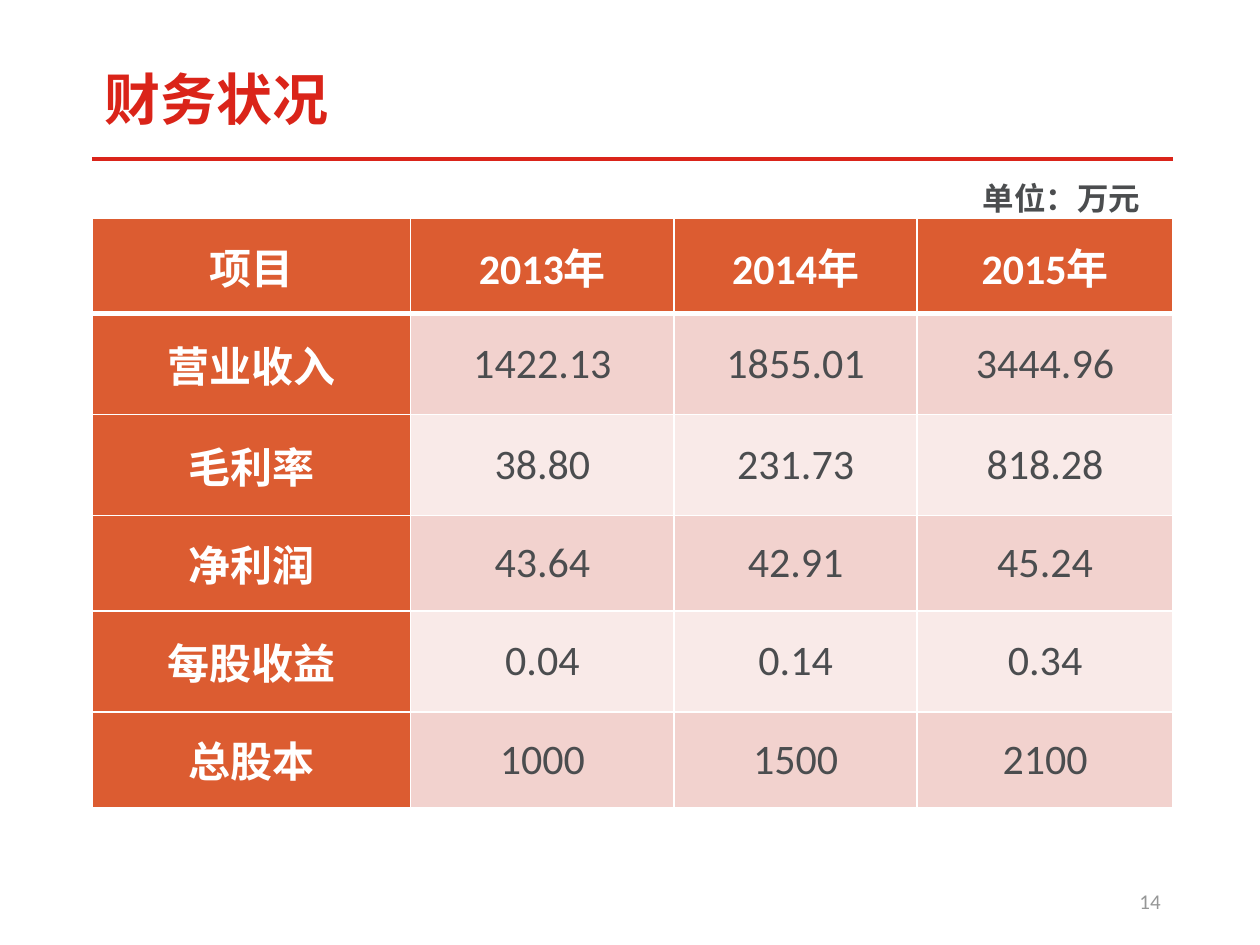
from pptx import Presentation
from pptx.dml.color import RGBColor
from pptx.enum.shapes import MSO_CONNECTOR
from pptx.enum.text import MSO_ANCHOR, MSO_AUTO_SIZE, PP_ALIGN
from pptx.oxml.ns import qn
from pptx.util import Inches, Pt
from lxml.etree import SubElement

RED, ORANGE, GREY, WHITE = "DA2419", "DC5C31", "4B4D4F", "FFFFFF"
BANDS = ["F2D2CE", "F9EAE8"]
CJK_FONT = "Noto Sans CJK SC"

FINANCES = [
    ["项目", "2013年", "2014年", "2015年"],
    ["营业收入", "1422.13", "1855.01", "3444.96"],
    ["毛利率", "38.80", "231.73", "818.28"],
    ["净利润", "43.64", "42.91", "45.24"],
    ["每股收益", "0.04", "0.14", "0.34"],
    ["总股本", "1000", "1500", "2100"],
]
COLUMN_WIDTHS = [2.53, 2.09, 1.93, 2.03]
ROW_HEIGHTS = [0.76, 0.8, 0.8, 0.76, 0.8, 0.76]


def rgb(value):
    return RGBColor.from_string(value)


def apply(target, formats):
    for name, value in formats.items():
        setattr(target, name, value)


def write(frame, text, color, font, paragraph_formats):
    paragraph = frame.paragraphs[0]
    apply(paragraph, paragraph_formats)
    run = paragraph.add_run()
    run.text = text
    apply(run.font, font)
    run.font.color.rgb = rgb(color)
    SubElement(run.font._element, qn("a:ea"), typeface=CJK_FONT)


def add_label(slide, box, text, color, font, frame_formats, paragraph_formats):
    frame = slide.shapes.add_textbox(*map(Inches, box)).text_frame
    apply(frame, frame_formats)
    write(frame, text, color, font, paragraph_formats)


def add_heading(slide, box):
    left, top, width, height = box
    rule_y = Inches(top + height)
    rule = slide.shapes.add_connector(
        MSO_CONNECTOR.STRAIGHT, Inches(left), rule_y, Inches(left + width), rule_y
    )
    rule.line.color.rgb = rgb("DA241A")
    rule.line.width = Pt(2.25)
    SubElement(rule._element.spPr, qn("a:effectLst"))
    add_label(
        slide, (left, top, 6.55, 0.59), "财务状况", RED,
        {"name": "Montserrat", "size": Pt(32), "bold": True},
        {"word_wrap": True, "auto_size": MSO_AUTO_SIZE.SHAPE_TO_FIT_TEXT},
        {"line_spacing": 0.9},
    )


def add_borders(cell, widths):
    properties = cell._tc.get_or_add_tcPr()
    for side, points in widths.items():
        border = SubElement(properties, qn(f"a:ln{side}"), w=str(Pt(points)))
        fill = SubElement(border, qn("a:solidFill"))
        SubElement(fill, qn("a:srgbClr"), val=WHITE)


def add_finance_table(slide, box):
    table = slide.shapes.add_table(
        len(FINANCES), len(COLUMN_WIDTHS), *map(Inches, box)
    ).table
    for column, width in zip(table.columns, COLUMN_WIDTHS):
        column.width = Inches(width)
    for r, (row, height, values) in enumerate(zip(table.rows, ROW_HEIGHTS, FINANCES)):
        row.height = Inches(height)
        for c, (cell, value) in enumerate(zip(row.cells, values)):
            is_header = r == 0 or c == 0
            apply(cell, {
                "margin_left": Inches(0.08), "margin_right": Inches(0.08),
                "margin_top": 0, "margin_bottom": 0,
                "vertical_anchor": MSO_ANCHOR.MIDDLE,
            })
            add_borders(cell, {
                "L": 1, "R": 1, "T": 3 if r == 1 else 1, "B": 3 if r == 0 else 1,
            })
            cell.fill.solid()
            cell.fill.fore_color.rgb = rgb(ORANGE if is_header else BANDS[(r - 1) % 2])
            write(
                cell.text_frame, value, WHITE if is_header else GREY,
                {"name": "Calibri", "size": Pt(24), "bold": is_header},
                {"alignment": PP_ALIGN.CENTER},
            )


def add_unit_note(slide, box):
    add_label(
        slide, box, "单位：万元", GREY,
        {"name": CJK_FONT, "size": Pt(18), "bold": True},
        {"word_wrap": False, "auto_size": MSO_AUTO_SIZE.SHAPE_TO_FIT_TEXT},
        {"alignment": PP_ALIGN.CENTER},
    )


def add_page_number(slide, box):
    add_label(
        slide, box, "14", "969797",
        {"name": "Calibri", "size": Pt(12)},
        {"word_wrap": True, "vertical_anchor": MSO_ANCHOR.MIDDLE},
        {"alignment": PP_ALIGN.RIGHT},
    )


def main():
    deck = Presentation()
    apply(deck, {"slide_width": Inches(10), "slide_height": Inches(7.5)})
    slide = deck.slides.add_slide(deck.slide_layouts[6])
    add_heading(slide, (0.73, 0.52, 8.58, 0.74))
    add_finance_table(slide, (0.73, 1.73, 8.58, 4.68))
    add_unit_note(slide, (7.69, 1.37, 1.47, 0.4))
    add_page_number(slide, (7.06, 6.95, 2.25, 0.4))
    deck.save("out.pptx")


if __name__ == "__main__":
    main()
